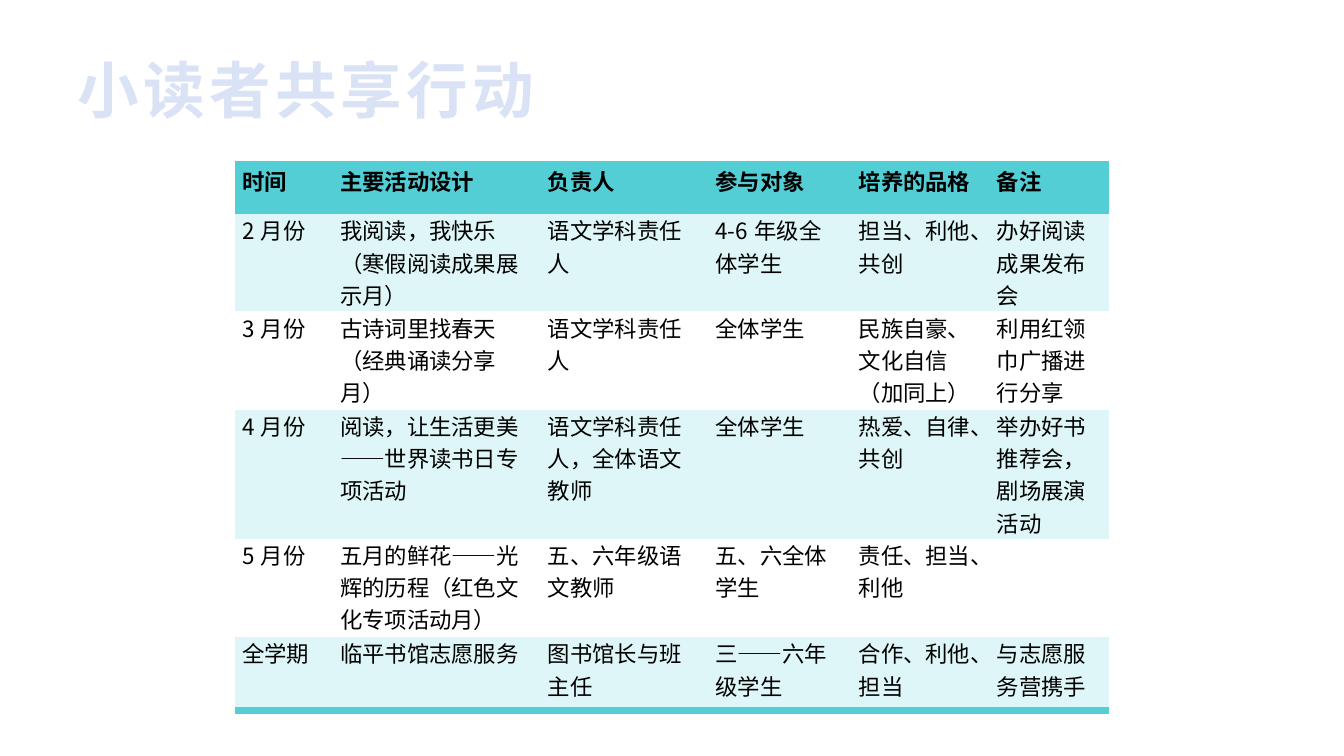
from lxml import etree
from pptx import Presentation
from pptx.dml.color import RGBColor
from pptx.enum.text import MSO_ANCHOR
from pptx.oxml import parse_xml
from pptx.oxml.ns import nsdecls, qn
from pptx.util import Cm, Pt

MIDDLE = MSO_ANCHOR.MIDDLE

# Content
TITLE = "小读者共享行动"
ROWS = [
    ("时间", "主要活动设计", "负责人", "参与对象", "培养的品格", "备注"),
    ("2月份", "我阅读，我快乐（寒假阅读成果展示月）", "语文学科责任人",
     "4-6年级全体学生", "担当、利他、共创", "办好阅读成果发布会"),
    ("3月份", "古诗词里找春天（经典诵读分享月）", "语文学科责任人",
     "全体学生", "民族自豪、文化自信（加同上）", "利用红领巾广播进行分享"),
    ("4月份", "阅读，让生活更美——世界读书日专项活动", "语文学科责任人，全体语文教师",
     "全体学生", "热爱、自律、共创", "举办好书推荐会，剧场展演活动"),
    ("5月份", "五月的鲜花——光辉的历程（红色文化专项活动月）", "五、六年级语文教师",
     "五、六全体学生", "责任、担当、利他", ""),
    ("全学期", "临平书馆志愿服务", "图书馆长与班主任",
     "三——六年级学生", "合作、利他、担当", "与志愿服务营携手"),
]
COL_WIDTHS = [2.47, 5.24, 4.22, 3.61, 3.48, 3]
ROW_HEIGHTS = [1.24, 2.45, 2.48, 3.25, 2.48, 1.86]

# Style
FONT = "Noto Sans CJK SC"
TEAL, PALE, WHITE, BLACK, LAVENDER = "53CED5", "DEF6F7", "FFFFFF", "000000", "DAE3F5"
NO_STYLE = "{2D5ABB26-0587-4C30-8999-92F81FD0307C}"


def color(value):
    return RGBColor.from_string(value)


def write(tf, text, size, ink, bold, spacing=0):
    p = tf.paragraphs[0]
    if text:
        p.add_run().text = text
    font = p.font
    font.name, font.size, font.bold = FONT, Pt(size), bold
    font.color.rgb = color(ink)
    props = p._p.xpath("a:pPr/a:defRPr")[0]
    etree.SubElement(props, qn("a:ea")).set("typeface", FONT)
    if spacing:
        props.set("spc", str(spacing * 100))


def add_border(cell, side):
    cell._tc.get_or_add_tcPr().insert(0, parse_xml(
        f'<a:{side} {nsdecls("a")} w="{Pt(6)}"><a:solidFill>'
        f'<a:srgbClr val="{TEAL}"/></a:solidFill></a:{side}>'))


prs = Presentation()
prs.slide_width, prs.slide_height = Cm(33.87), Cm(19.05)
s = prs.slides.add_slide(prs.slide_layouts[6])

# Title
tf = s.shapes.add_textbox(Cm(1.96), Cm(1.13), Cm(30), Cm(2.2)).text_frame
tf.word_wrap = True
tf.vertical_anchor = MIDDLE
tf.margin_left = tf.margin_right = tf.margin_top = tf.margin_bottom = 0
write(tf, TITLE, 44, LAVENDER, True, spacing=3)

# Activity table
frame = s.shapes.add_table(len(ROWS), len(COL_WIDTHS), Cm(5.92), Cm(4.15),
                           Cm(sum(COL_WIDTHS)), Cm(sum(ROW_HEIGHTS)))
frame.element.xpath(".//a:tableStyleId")[0].text = NO_STYLE
table = frame.table
table.first_row = table.horz_banding = False
for column, width in zip(table.columns, COL_WIDTHS):
    column.width = Cm(width)
for row, height in zip(table.rows, ROW_HEIGHTS):
    row.height = Cm(height)

last = len(ROWS) - 1
for i, texts in enumerate(ROWS):
    fill = TEAL if i == 0 else PALE if i % 2 else WHITE
    for j, text in enumerate(texts):
        cell = table.cell(i, j)
        cell.margin_left, cell.margin_right = Cm(0.18), Cm(0.25)
        cell.margin_top = cell.margin_bottom = 0
        cell.fill.solid()
        cell.fill.fore_color.rgb = color(fill)
        write(cell.text_frame, text, 16, BLACK, i == 0)
        if i == 0:
            add_border(cell, "lnT")
        elif i == last:
            add_border(cell, "lnB")

prs.save("out.pptx")
